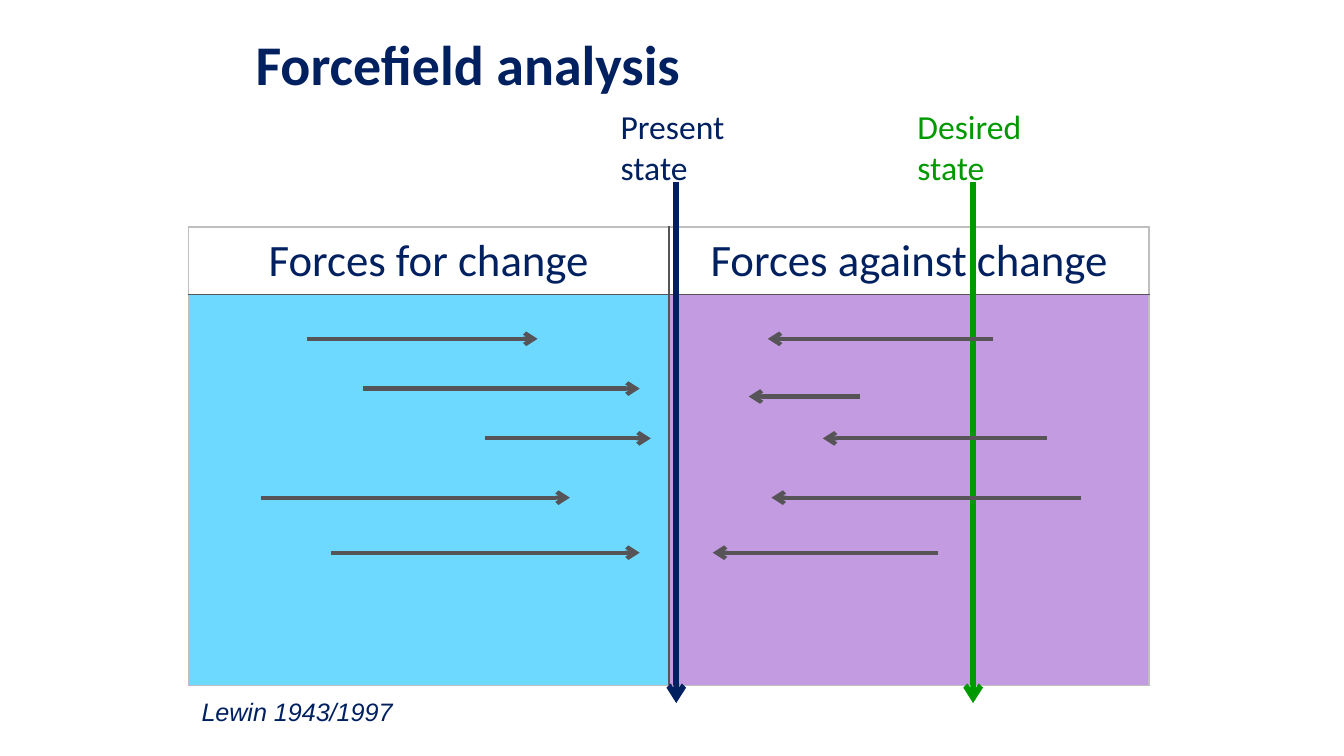
from lxml import etree
from pptx import Presentation
from pptx.dml.color import RGBColor
from pptx.enum.shapes import MSO_CONNECTOR
from pptx.enum.text import MSO_ANCHOR, PP_ALIGN
from pptx.oxml import parse_xml
from pptx.oxml.ns import nsdecls, qn
from pptx.util import Cm, Pt

NAVY, GREEN, GREY, PALE = "002060", "009900", "565456", "BFBFBF"
BLUE, PURPLE = "6DD9FF", "C39BE1"

# Start, end and height of each arrow, in cm from the table's corner
FORCES_FOR = [(2.24, 6.6, 2.11), (3.3, 8.53, 3.05), (5.61, 8.74, 3.99),
              (1.37, 7.21, 5.11), (2.69, 8.53, 6.15)]
FORCES_AGAINST = [(15.21, 10.95, 2.11), (12.7, 10.59, 3.2), (16.23, 11.99, 3.99),
                  (16.87, 11.02, 5.11), (14.17, 9.91, 6.15)]


def color(value):
    return RGBColor.from_string(value)


def write(frame, text, size=18, font="Calibri", ink=NAVY, bold=False,
          italic=False, align=PP_ALIGN.LEFT):
    paragraph = frame.paragraphs[0]
    paragraph.alignment = align
    run = paragraph.add_run()
    run.text = text
    run.font.size, run.font.name = Pt(size), font
    run.font.bold, run.font.italic = bold, italic
    run.font.color.rgb = color(ink)


def add_label(slide, box, text, **style):
    frame = slide.shapes.add_textbox(*map(Cm, box)).text_frame
    frame.word_wrap = True
    write(frame, text, **style)
    return frame


def add_arrow(slide, start, end, ink, width):
    arrow = slide.shapes.add_connector(
        MSO_CONNECTOR.STRAIGHT, *map(Cm, (*start, *end)))
    arrow.line.color.rgb = color(ink)
    arrow.line.width = Pt(width)
    etree.SubElement(arrow.line._get_or_add_ln(), qn("a:tailEnd"), type="arrow")
    etree.SubElement(arrow._element.spPr, qn("a:effectLst"))


def set_borders(cell, **inks):
    properties = cell._tc.get_or_add_tcPr()
    for side in "LRTB":
        properties.append(parse_xml(
            f'<a:ln{side} {nsdecls("a")} w="12700"><a:solidFill>'
            f'<a:srgbClr val="{inks[side]}"/></a:solidFill></a:ln{side}>'))


def add_title(slide, box):
    frame = add_label(slide, box, "Forcefield analysis", size=30, bold=True)
    frame.vertical_anchor = MSO_ANCHOR.MIDDLE
    frame.margin_left = frame.margin_right = frame.margin_top = frame.margin_bottom = 0


def add_force_table(slide, box):
    left, top, width, height = box
    table = slide.shapes.add_table(2, 2, *map(Cm, box)).table
    table.first_row = table.horz_banding = False
    header = 1.23
    table.rows[0].height, table.rows[1].height = Cm(header), Cm(height - header)
    columns = [("Forces for change", BLUE), ("Forces against change", PURPLE)]
    for i, (heading, tint) in enumerate(columns):
        table.columns[i].width = Cm(width / 2)
        sides = {"L": GREY if i else PALE, "R": PALE if i else GREY}
        head, body = table.cell(0, i), table.cell(1, i)
        set_borders(head, T=PALE, B=GREY, **sides)
        set_borders(body, T=GREY, B=PALE, **sides)
        head.fill.background()
        body.fill.solid()
        body.fill.fore_color.rgb = color(tint)
        write(head.text_frame, heading, size=24, align=PP_ALIGN.CENTER)


def add_force_arrows(slide, box):
    left, top = box[:2]
    for start, end, drop in FORCES_FOR + FORCES_AGAINST:
        y = top + drop
        add_arrow(slide, (left + start, y), (left + end, y), GREY, 2.25)


def add_state(slide, box, text, ink):
    """A caption with a long arrow running down through the table."""
    left, top, width, height = box
    add_label(slide, (left, top, width, 1.8), text, ink=ink)
    x = left + 1.3
    add_arrow(slide, (x, top + 1.55), (x, top + height), ink, 3)


def main():
    deck = Presentation()
    deck.slide_width, deck.slide_height = Cm(25.4), Cm(14.28)
    slide = deck.slides.add_slide(deck.slide_layouts[6])
    force_box = (3.56, 4.29, 18.16, 8.62)

    # Title and table
    add_title(slide, (4.83, 0, 14.55, 2.39))
    add_force_table(slide, force_box)
    # States and forces
    add_state(slide, (11.48, 1.88, 3.15, 11.4), "Present state", NAVY)
    add_state(slide, (17.09, 1.88, 2.82, 11.4), "Desired state", GREEN)
    add_force_arrows(slide, force_box)
    # Citation
    add_label(slide, (3.56, 13.03, 4.29, 0.84), "Lewin 1943/1997",
              size=13.5, font="Arial", italic=True)
    deck.save("out.pptx")


if __name__ == "__main__":
    main()
